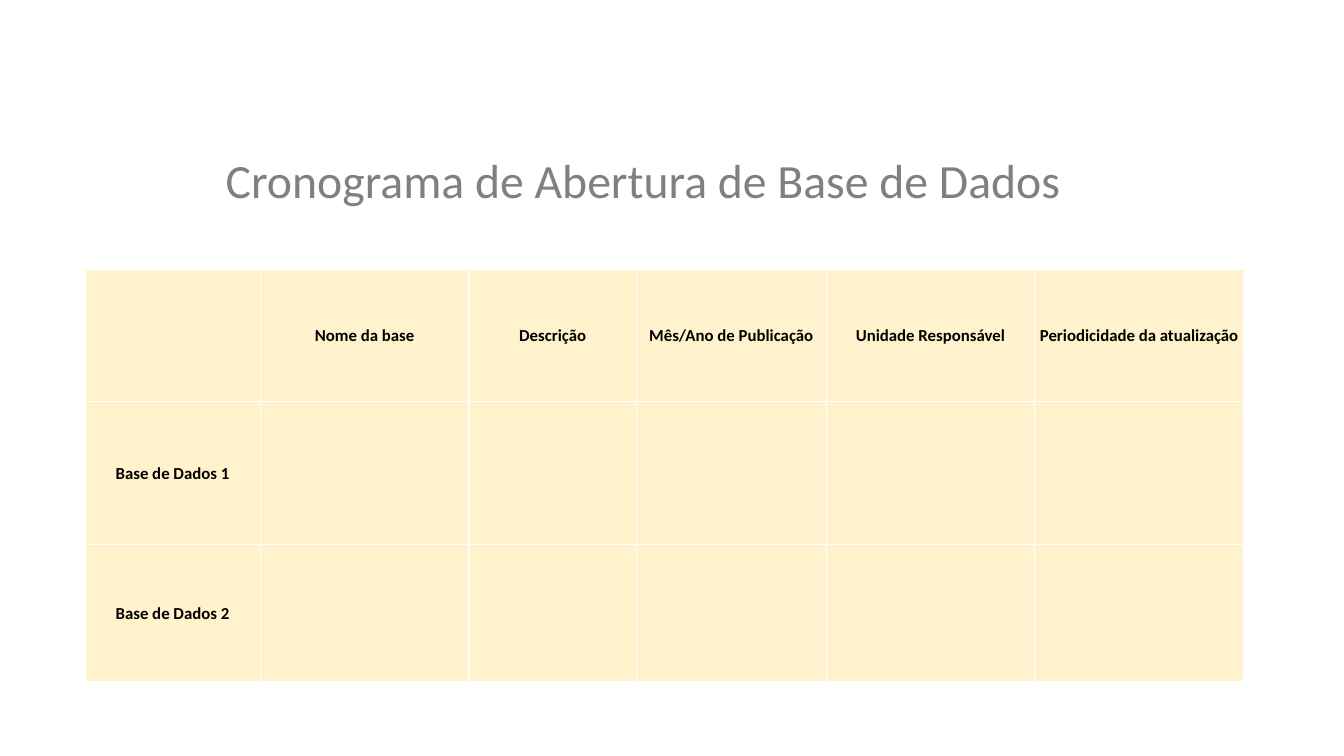
from lxml.etree import SubElement
from pptx import Presentation
from pptx.dml.color import RGBColor
from pptx.enum.text import MSO_ANCHOR, PP_ALIGN
from pptx.oxml.ns import qn
from pptx.util import Cm, Pt

TITLE = "Cronograma de Abertura de Base de Dados"
ROWS = [
    ["", "Nome da base", "Descrição", "Mês/Ano de Publicação",
     "Unidade Responsável", "Periodicidade da atualização"],
    ["Base de Dados 1", "", "", "", "", ""],
    ["Base de Dados 2", "", "", "", "", ""],
]
COLORS = {"title": "808080", "text": "000000", "cell": "FFF2CC", "border": "FFFFFF"}
COLUMN_WIDTHS = [4.42, 5.26, 4.22, 4.78, 5.26, 5.26]
ROW_HEIGHTS = [3.33, 3.61, 3.45]
TITLE_FONT = {"name": "Calibri", "size": Pt(34.1), "bold": False}
CELL_FONT = {"name": "Calibri", "size": Pt(12), "bold": True}
TITLE_BOX = {"left": Cm(2.72), "top": Cm(3), "width": Cm(26.97), "height": Cm(2.34)}
CELL_FORMAT = {"margin_left": Cm(0.03), "margin_right": Cm(0.03), "margin_top": Cm(0.03),
               "margin_bottom": Cm(0), "vertical_anchor": MSO_ANCHOR.MIDDLE}
TABLE_FLAGS = {"first_row": False, "horz_banding": False}


def apply(target, values):
    for name, value in values.items():
        setattr(target, name, value)


def write(paragraph, text, font, color):
    paragraph.alignment = PP_ALIGN.CENTER
    span = paragraph.add_run()
    span.text = text
    apply(span.font, font)
    span.font.color.rgb = RGBColor.from_string(COLORS[color])


def add_borders(cell):
    properties = cell._tc.get_or_add_tcPr()
    for side in ("a:lnL", "a:lnR", "a:lnT", "a:lnB"):
        line = SubElement(properties, qn(side), w=str(Pt(1)))
        fill = SubElement(line, qn("a:solidFill"))
        SubElement(fill, qn("a:srgbClr"), val=COLORS["border"])


def add_title(page):
    title = page.shapes.title
    apply(title, TITLE_BOX)
    title.text_frame.vertical_anchor = MSO_ANCHOR.BOTTOM
    title.text_frame.word_wrap = True
    paragraph = title.text_frame.paragraphs[0]
    paragraph.line_spacing = 0.7
    write(paragraph, TITLE, TITLE_FONT, "title")


def add_schedule(page):
    table = page.shapes.add_table(
        len(ROWS), len(COLUMN_WIDTHS), Cm(2.14), Cm(6.78),
        Cm(sum(COLUMN_WIDTHS)), Cm(sum(ROW_HEIGHTS))).table
    apply(table, TABLE_FLAGS)
    for column, width in zip(table.columns, COLUMN_WIDTHS):
        column.width = Cm(width)
    for row, height, texts in zip(table.rows, ROW_HEIGHTS, ROWS):
        row.height = Cm(height)
        for cell, text in zip(row.cells, texts):
            apply(cell, CELL_FORMAT)
            add_borders(cell)
            cell.fill.solid()
            cell.fill.fore_color.rgb = RGBColor.from_string(COLORS["cell"])
            if text:
                write(cell.text_frame.paragraphs[0], text, CELL_FONT, "text")


def main():
    deck = Presentation()
    apply(deck, {"slide_width": Cm(33.87), "slide_height": Cm(19.05)})
    page = deck.slides.add_slide(deck.slide_layouts.get_by_name("Title Only"))
    add_title(page)
    add_schedule(page)
    deck.save("out.pptx")


if __name__ == "__main__":
    main()
